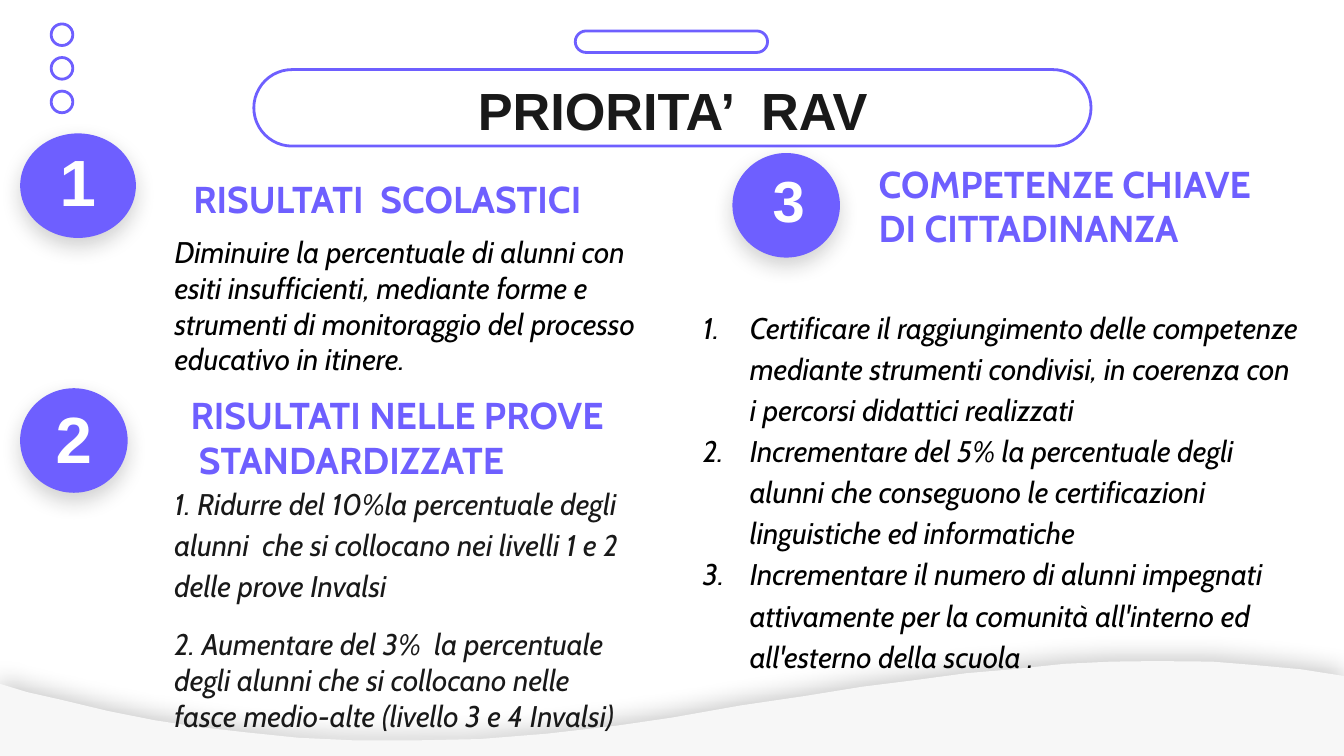
"""Build the PRIORITA' RAV slide with its three numbered priorities."""
from lxml import etree
from pptx import Presentation
from pptx import util as u
from pptx.dml.color import RGBColor
from pptx.enum import shapes, text
from pptx.oxml import ns


class Theme:
    violet = RGBColor(0x6E, 0x5F, 0xFF)
    dark = RGBColor(0x19, 0x19, 0x19)
    black = RGBColor(0, 0, 0)
    white = RGBColor(255, 255, 255)
    wave = RGBColor(0xF7, 0xF7, 0xF7)
    title = dict(name="Arial", size=u.Pt(28), bold=True)
    heading = dict(name="Cabin", size=u.Pt(20), bold=True)
    body = dict(name="Cabin", size=u.Pt(16), italic=True)
    number = dict(name="Arial", size=u.Pt(35), bold=True)
    small_number = dict(name="Arial", size=u.Pt(31), bold=True)


def add_shadow(sp, color, distance, angle):
    sp.shadow.inherit = False
    effects = sp._element.spPr.find(ns.qn("a:effectLst"))
    outer = etree.SubElement(effects, ns.qn("a:outerShdw"), blurRad=str(u.Pt(11.2)),
                             dist=str(u.Pt(distance)), dir=str(angle * 60000),
                             algn="bl", rotWithShape="0")
    clr = etree.SubElement(outer, ns.qn("a:srgbClr"), val=str(color))
    etree.SubElement(clr, ns.qn("a:alpha"), val="20000")


def add_text(box, paragraphs, font, color, align=text.PP_ALIGN.LEFT, numbered=False):
    tf = s.shapes.add_textbox(*map(u.Pt, box)).text_frame
    frame = dict(word_wrap=True, vertical_anchor=text.MSO_ANCHOR.MIDDLE)
    frame.update({f"margin_{side}": u.Pt(7.2) for side in ("left", "top", "right", "bottom")})
    for key, value in frame.items():
        setattr(tf, key, value)
    for i, (words, layout) in enumerate(paragraphs):
        p = tf.paragraphs[0] if i == 0 else tf.add_paragraph()
        p.alignment = align
        for key, value in layout.items():
            setattr(p, key, value)
        if numbered:
            pPr = p._p.get_or_add_pPr()
            pPr.set("marL", str(u.Pt(36)))
            pPr.set("indent", str(-u.Pt(25.2)))
            etree.SubElement(pPr, ns.qn("a:buFont"), typeface=font["name"])
            etree.SubElement(pPr, ns.qn("a:buAutoNum"), type="arabicPeriod")
        r = p.add_run()
        r.text = words
        for key, value in font.items():
            setattr(r.font, key, value)
        r.font.color.rgb = color
    return tf


prs = Presentation()
prs.slide_width, prs.slide_height = u.Pt(720), u.Pt(405)
s = prs.slides.add_slide(prs.slide_layouts[6])

crest = [(0, 366.4), (14.4, 370.8), (33, 375), (57.6, 380.9), (82.8, 385.9),
         (106.6, 389.5), (131.8, 392.4), (159.8, 395.3), (190, 396.7), (222.5, 396.7),
         (257, 396), (293, 393.1), (330.5, 388.8), (360, 384.5), (396.7, 378),
         (430.6, 373), (462.2, 367.9), (491, 364.3), (517.7, 360.7), (542.2, 358.6),
         (570.2, 355.7), (595.4, 354.5), (619, 354.2), (649.4, 354.5), (673, 356.4),
         (697, 358.6), (720, 362.2)]
outline = [(u.Pt(x), u.Pt(y)) for x, y in crest + [(720, 405), (0, 405)]]
builder = s.shapes.build_freeform(*outline[0])
builder.add_line_segments(outline[1:], close=True)
wave = builder.convert_to_shape()
wave.fill.solid()
wave.fill.fore_color.rgb = Theme.wave
wave.line.fill.background()
add_shadow(wave, Theme.black, 3.8, 261)

OVAL, PILL = shapes.MSO_SHAPE.OVAL, shapes.MSO_SHAPE.ROUNDED_RECTANGLE
outlined = [(OVAL, (27.4, 12.8 + 18 * i, 11.6, 11.6)) for i in range(3)]
outlined += [(PILL, (308.2, 16.6, 103, 11.5)), (PILL, (136, 37.3, 448.5, 41))]
for kind, box in outlined:
    sp = s.shapes.add_shape(kind, *map(u.Pt, box))
    sp.shadow.inherit = False
    sp.fill.background()
    sp.line.color.rgb = Theme.violet
    sp.line.width = u.Pt(1.5)
    if kind == PILL:
        sp.adjustments[0] = 0.5

for left, top, width in [(392.4, 82, 57.6), (10.8, 208, 57.6), (10.8, 71.5, 62)]:
    sp = s.shapes.add_shape(OVAL, *map(u.Pt, (left, top, width, 56)))
    sp.fill.solid()
    sp.fill.fore_color.rgb = Theme.violet
    sp.line.fill.background()
    add_shadow(sp, Theme.dark, 4.5, 90)

add_text((56.9, 38, 607, 41), [("PRIORITA’  RAV", {})],
         Theme.title, Theme.dark, text.PP_ALIGN.CENTER)

headings = [
    ((96.5, 92.2, 257, 28.8), ["RISULTATI  SCOLASTICI"]),
    ((463.7, 82, 232.6, 56.2), ["COMPETENZE CHIAVE DI CITTADINANZA"]),
    ((95, 206, 272.2, 56.2), ["RISULTATI NELLE PROVE", "STANDARDIZZATE"]),
]
for box, lines in headings:
    tf = add_text(box, [(line, {}) for line in lines], Theme.heading, Theme.violet)
    for p in tf.paragraphs[1:]:
        p._p.get_or_add_pPr().set("marL", str(u.Pt(4.5)))

add_text((86.4, 121, 277.2, 85),
         [("Diminuire la percentuale di alunni con esiti insufficienti, mediante forme e "
           "strumenti di monitoraggio del processo educativo in itinere.", {})],
         Theme.body, Theme.black)
add_text((86.4, 260, 254.9, 130.3),
         [("1. Ridurre del 10%la percentuale degli alunni  che si collocano nei livelli "
           "1 e 2 delle prove Invalsi", dict(line_spacing=1.15)),
          ("2. Aumentare del 3%  la percentuale degli alunni che si collocano nelle fasce "
           "medio-alte (livello 3 e 4 Invalsi)", dict(space_before=u.Pt(12)))],
         Theme.body, Theme.dark)

goals = [
    "Certificare il raggiungimento delle competenze mediante strumenti condivisi, "
    "in coerenza con i percorsi didattici realizzati",
    "Incrementare del 5% la percentuale degli alunni che conseguono le certificazioni "
    "linguistiche ed informatiche",
    "Incrementare il numero di alunni impegnati attivamente per la comunità "
    "all'interno ed all'esterno della scuola .",
]
add_text((358.6, 155, 346.3, 214), [(goal, dict(line_spacing=1.15)) for goal in goals],
         Theme.body, Theme.black, numbered=True)

for digit, box, font in [("1", (7.9, 68.4, 67.7, 56.2), Theme.number),
                         ("3", (397.6, 89.3, 50, 35.3), Theme.small_number),
                         ("2", (10.8, 216.7, 57.6, 35.3), Theme.number)]:
    add_text(box, [(digit, {})], font, Theme.white, text.PP_ALIGN.CENTER)

prs.save("out.pptx")
